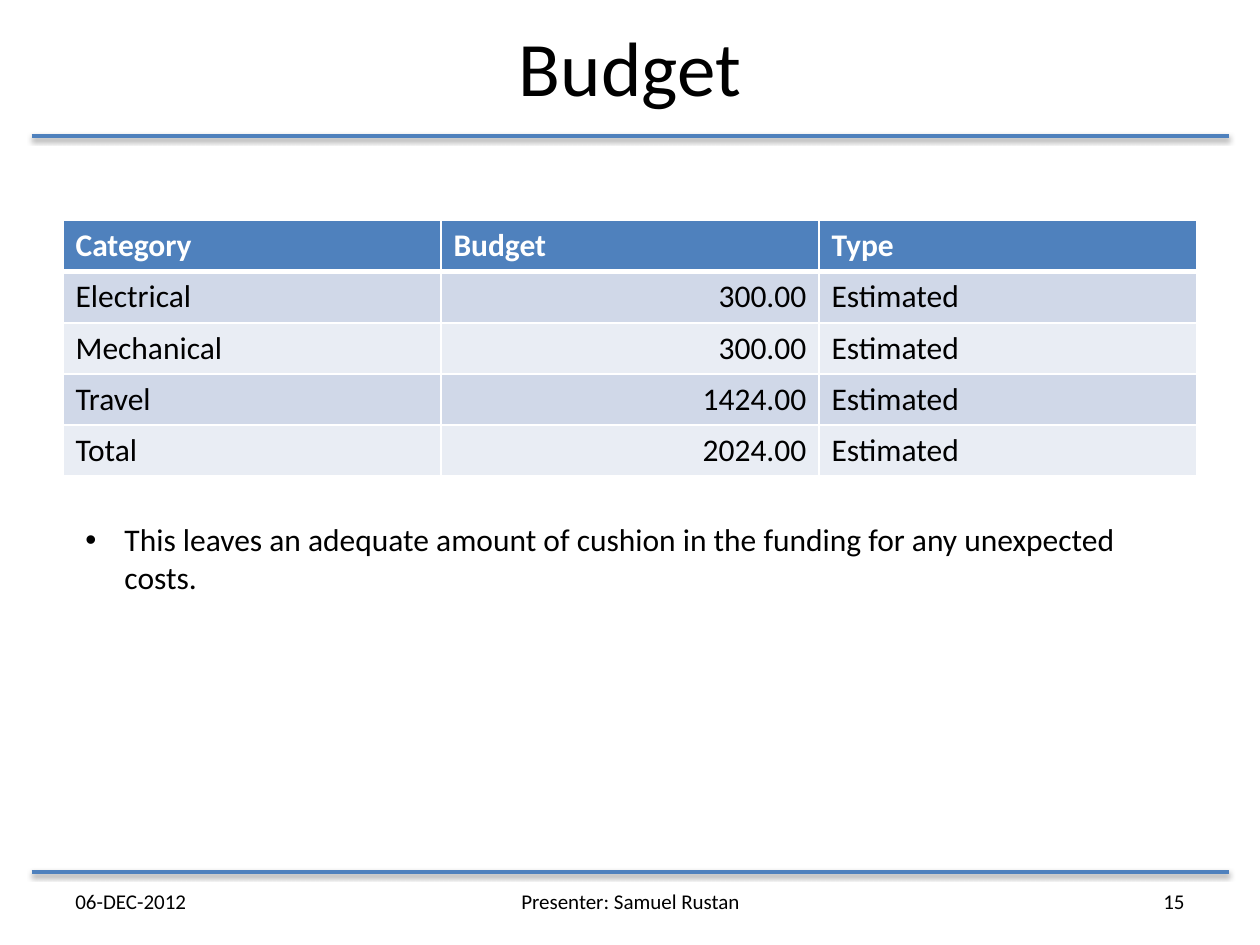
from dataclasses import dataclass

from lxml.etree import SubElement
from pptx import Presentation
from pptx.dml.color import RGBColor
from pptx.enum.shapes import MSO_CONNECTOR
from pptx.enum.text import MSO_ANCHOR, PP_ALIGN
from pptx.oxml.ns import qn
from pptx.util import Inches, Pt


@dataclass(frozen=True)
class Theme:
    font: str = "Calibri"
    ink: str = "000000"
    paper: str = "FFFFFF"
    accent: str = "4F81BD"
    bands: tuple = ("D0D8E8", "E9EDF4")
    title_size: int = 44
    body_size: int = 18
    footer_size: int = 12
    rule_width: int = 2
    grid_width: int = 1
    header_grid_width: int = 3


class SlideBuilder:
    def __init__(self, page, theme):
        self.page = page
        self.theme = theme

    def fill_text(self, frame, text, size, color=None, align=PP_ALIGN.LEFT, bold=False):
        para = frame.paragraphs[0]
        para.alignment = align
        span = para.add_run()
        span.text = text
        formats = {"name": self.theme.font, "size": Pt(size), "bold": bold}
        for name, value in formats.items():
            setattr(span.font, name, value)
        span.font.color.rgb = RGBColor.from_string(color or self.theme.ink)
        return para

    def text(self, area, text, size, align=PP_ALIGN.LEFT, anchor=MSO_ANCHOR.MIDDLE):
        box = self.page.shapes.add_textbox(*map(Inches, area))
        formats = {"word_wrap": True, "vertical_anchor": anchor}
        for name, value in formats.items():
            setattr(box.text_frame, name, value)
        return self.fill_text(box.text_frame, text, size, align=align)

    def bullet(self, area, text, indent):
        para = self.text(area, text, self.theme.body_size, anchor=MSO_ANCHOR.TOP)
        properties = para._p.get_or_add_pPr()
        properties.set("marL", str(Inches(indent)))
        properties.set("indent", str(-Inches(indent)))
        SubElement(properties, qn("a:buFont"), typeface="Arial")
        SubElement(properties, qn("a:buChar"), char="•")

    def rule(self, left, right, top):
        line = self.page.shapes.add_connector(
            MSO_CONNECTOR.STRAIGHT, *map(Inches, (left, top, right, top)))
        line.line.color.rgb = RGBColor.from_string(self.theme.accent)
        line.line.width = Pt(self.theme.rule_width)
        effects = SubElement(line._element.spPr, qn("a:effectLst"))
        shadow = SubElement(
            effects, qn("a:outerShdw"), blurRad=str(Pt(3.1)), dist=str(Pt(1.6)),
            dir="5400000", rotWithShape="0")
        color = SubElement(shadow, qn("a:srgbClr"), val=self.theme.ink)
        SubElement(color, qn("a:alpha"), val="38000")

    def borders(self, cell, top, bottom):
        properties = cell._tc.get_or_add_tcPr()
        thin = self.theme.grid_width
        widths = {"a:lnL": thin, "a:lnR": thin, "a:lnT": top, "a:lnB": bottom}
        for tag, width in widths.items():
            edge = SubElement(properties, qn(tag), w=str(Pt(width)))
            fill = SubElement(edge, qn("a:solidFill"))
            SubElement(fill, qn("a:srgbClr"), val=self.theme.paper)

    def table(self, area, rows, alignments):
        theme = self.theme
        frame = self.page.shapes.add_table(
            len(rows), len(rows[0]), *map(Inches, area))
        thin, thick = theme.grid_width, theme.header_grid_width
        for row_index, values in enumerate(rows):
            header = row_index == 0
            fill = theme.accent if header else theme.bands[(row_index - 1) % 2]
            color = theme.paper if header else theme.ink
            top = thick if row_index == 1 else thin
            bottom = thick if header else thin
            for column_index, value in enumerate(values):
                cell = frame.table.cell(row_index, column_index)
                align = PP_ALIGN.LEFT if header else alignments[column_index]
                self.fill_text(cell.text_frame, value, theme.body_size, color, align, header)
                self.borders(cell, top, bottom)
                cell.fill.solid()
                cell.fill.fore_color.rgb = RGBColor.from_string(fill)


def main():
    deck = Presentation()
    deck.slide_width, deck.slide_height = Inches(10), Inches(7.5)
    theme = Theme()
    builder = SlideBuilder(deck.slides.add_slide(deck.slide_layouts[6]), theme)

    builder.text((0.5, 0, 9, 1.05), "Budget", theme.title_size, PP_ALIGN.CENTER)
    budget = [
        ("Category", "Budget", "Type"),
        ("Electrical", "300.00", "Estimated"),
        ("Mechanical", "300.00", "Estimated"),
        ("Travel", "1424.00", "Estimated"),
        ("Total", "2024.00", "Estimated"),
    ]
    builder.table((0.5, 1.75, 9, 2.03), budget,
                  (PP_ALIGN.LEFT, PP_ALIGN.RIGHT, PP_ALIGN.LEFT))
    builder.bullet(
        (0.58, 4.08, 9, 0.71),
        "This leaves an adequate amount of cushion in the funding for any unexpected costs.",
        0.31)

    footers = [
        (0.5, 2.33, "06-DEC-2012", PP_ALIGN.LEFT),
        (3.42, 3.17, "Presenter: Samuel Rustan", PP_ALIGN.CENTER),
        (7.17, 2.33, "15", PP_ALIGN.RIGHT),
    ]
    for left, width, label, align in footers:
        builder.text((left, 6.95, width, 0.4), label, theme.footer_size, align)
    for top in (1.08, 6.92):
        builder.rule(0.25, 9.75, top)

    deck.save("out.pptx")


if __name__ == "__main__":
    main()
